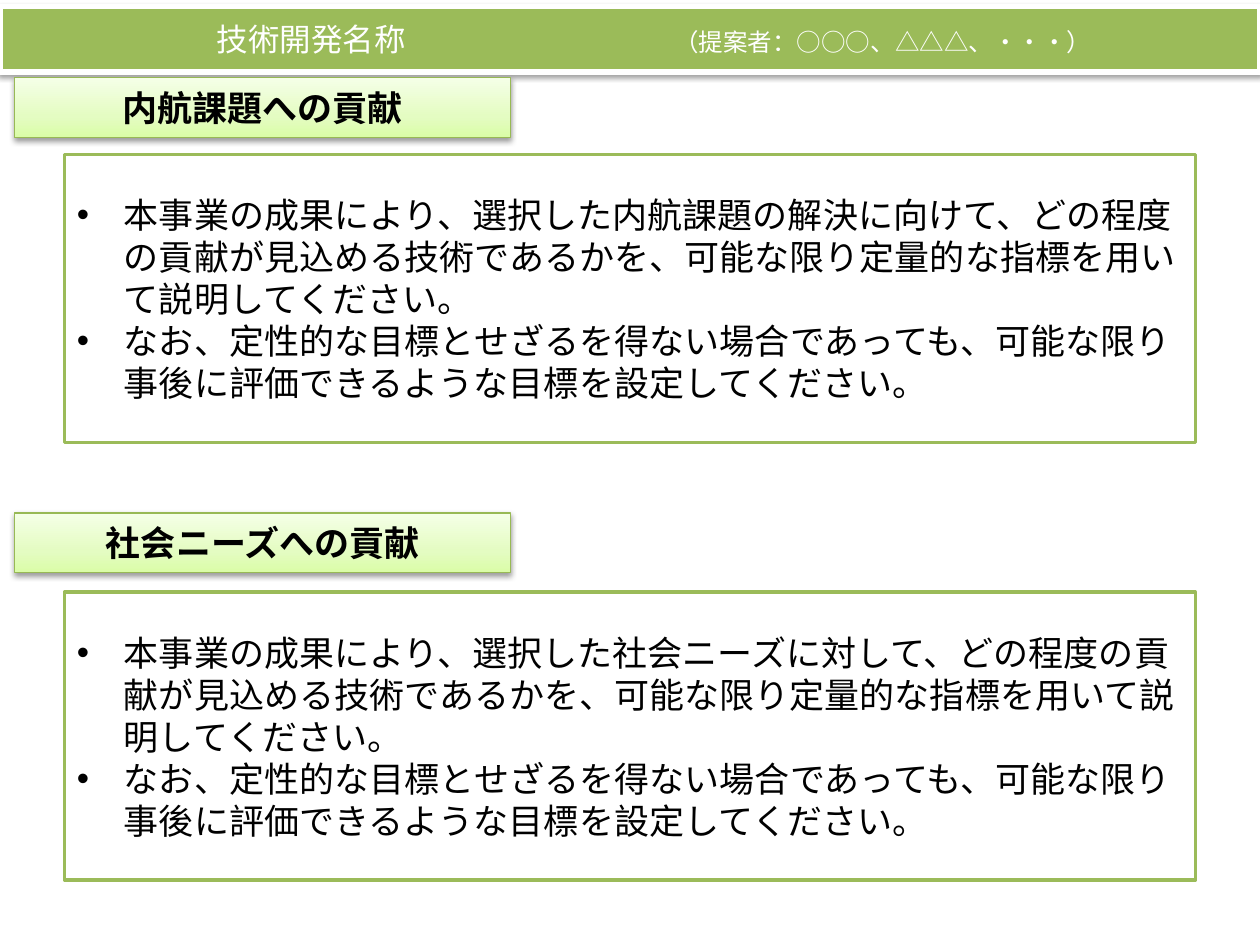
from copy import deepcopy
from pptx import Presentation
from pptx.dml.color import RGBColor as RGB
from pptx.enum.shapes import MSO_SHAPE as Kind
from pptx.enum.text import MSO_ANCHOR as Anchor, MSO_AUTO_SIZE as Auto, PP_ALIGN as Align
from pptx.oxml.ns import qn
from pptx.util import Cm, Pt
from lxml.etree import SubElement as Sub

# Content
HEAD = [("技術開発名称", 18), ("\t（提案者：○○○、△△△、・・・）", 14)]
NOTE = "なお、定性的な目標とせざるを得ない場合であっても、可能な限り事後に評価できるような目標を設定してください。"
ASK = "本事業の成果により、選択した{}どの程度の貢献が見込める技術であるかを、可能な限り定量的な指標を用いて説明してください。"
PARTS = [  # label, goal, label top, box top
    ("内航課題への貢献", "内航課題の解決に向けて、", 1.57, 3.12),
    ("社会ニーズへの貢献", "社会ニーズに対して、", 10.34, 11.94),
]

# Style
HUES = {"green": "9BBB59", "edge": "98B955", "white": "FFFFFF", "black": "000000"}
FADE = [(0, "DAFDA7"), (0.35, "E4FCC2"), (1, "F5FFE7")]
BODY = {"name": "Calibri", "size": Pt(20), "color": "black"}
BOLD = {**BODY, "bold": True}
TAB = 9.22


def style(run, form):
    for key, val in form.items():
        if key == "color":
            run.font.color.rgb = RGB.from_string(HUES[val])
        else:
            setattr(run.font, key, val)


def write(para, text, form, align):
    para.alignment = align
    run = para.add_run()
    run.text = text
    style(run, form)


def dress(shape, line, width, fill=None):
    if fill:
        shape.fill.solid()
        shape.fill.fore_color.rgb = RGB.from_string(HUES[fill])
    shape.line.color.rgb = RGB.from_string(HUES[line])
    shape.line.width = Pt(width)
    shape.shadow.inherit = False
    frame = shape.text_frame
    frame.word_wrap = True
    frame.auto_size = Auto.NONE
    frame.vertical_anchor = Anchor.MIDDLE
    return frame


def fade(shape):
    shape.fill.gradient()
    shape.fill.gradient_angle = 90
    stops = shape._element.spPr.find(".//" + qn("a:gsLst"))
    stops.append(deepcopy(stops[-1]))
    for stop, (pos, hue) in zip(shape.fill.gradient_stops, FADE):
        stop.position = pos
        stop.color.rgb = RGB.from_string(hue)


def shade(shape):
    root = shape._element.spPr.find(qn("a:effectLst"))
    cast = Sub(root, qn("a:outerShdw"), blurRad=str(Pt(3.1)), dist=str(Pt(1.6)),
               dir="5400000", rotWithShape="0")
    hue = Sub(cast, qn("a:srgbClr"), val=HUES["black"])
    Sub(hue, qn("a:alpha"), val="38000")


def bullet(para):
    props = para._p.get_or_add_pPr()
    props.set("marL", str(Cm(0.95)))
    props.set("indent", str(-Cm(0.95)))
    Sub(props, qn("a:buFont"), typeface="Arial")
    Sub(props, qn("a:buChar"), char="•")


def main():
    deck = Presentation()
    deck.slide_width, deck.slide_height = Cm(25.4), Cm(19.05)
    slide = deck.slides.add_slide(deck.slide_layouts[5])

    def rect(*box):
        return slide.shapes.add_shape(Kind.RECTANGLE, *map(Cm, box))

    # Header bar: name on the left, proposer at a tab stop
    bar = slide.shapes.title
    bar.left, bar.top, bar.width, bar.height = map(Cm, (0, 0.13, 25.4, 1.32))
    frame = dress(bar, "white", 3, "green")
    shade(bar)
    frame.margin_left = Cm(4.37)
    para = frame.paragraphs[0]
    for text, size in HEAD:
        write(para, text, {"name": "Calibri", "size": Pt(size), "color": "white"}, Align.LEFT)
    tabs = Sub(para._p.get_or_add_pPr(), qn("a:tabLst"))
    Sub(tabs, qn("a:tab"), pos=str(Cm(TAB)), algn="l")

    # Each part: a label and a bulleted box
    for name, goal, top, low in PARTS:
        label = rect(0.3, top, 10, 1.2)
        fade(label)
        frame = dress(label, "edge", 0.75)
        shade(label)
        write(frame.paragraphs[0], name, BOLD, Align.CENTER)

        frame = dress(rect(1.3, low, 22.8, 5.8), "green", 2, "white")
        for num, text in enumerate((ASK.format(goal), NOTE)):
            para = frame.add_paragraph() if num else frame.paragraphs[0]
            write(para, text, BODY, Align.LEFT)
            bullet(para)

    deck.save("out.pptx")


if __name__ == "__main__":
    main()
